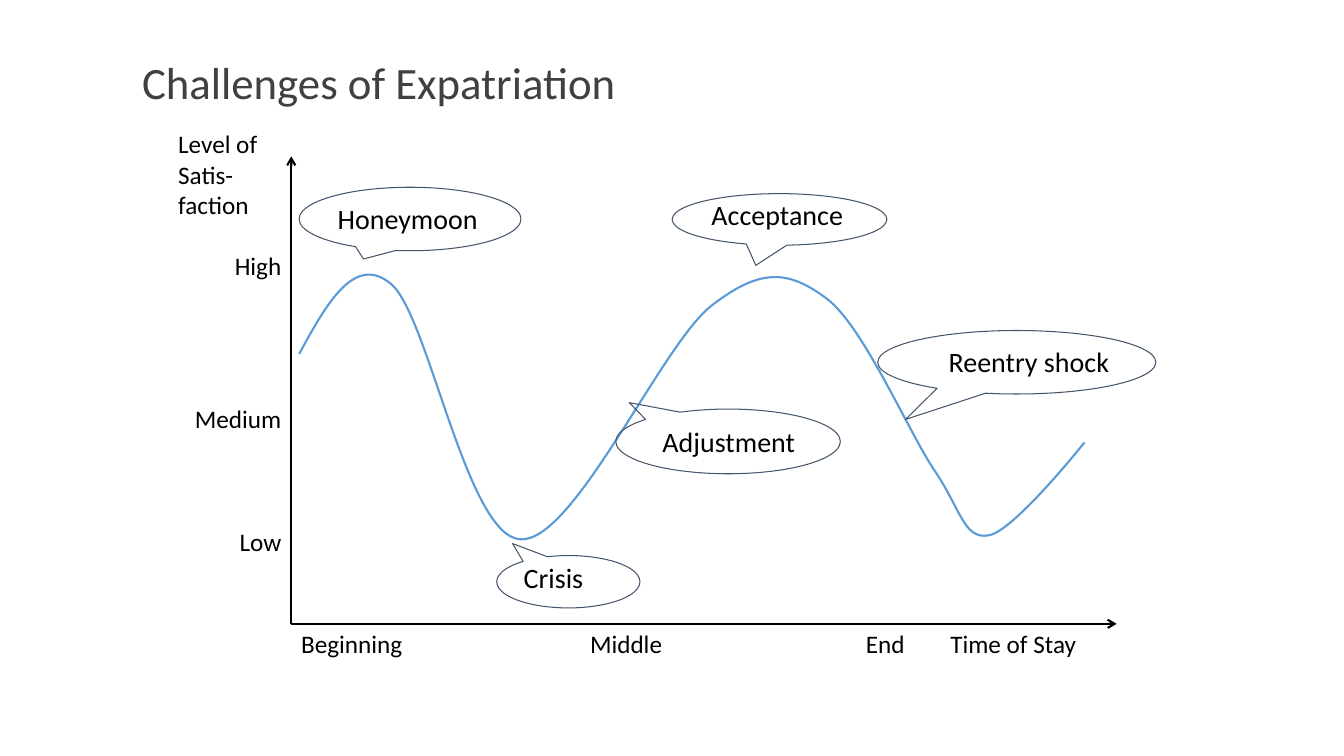
import pptx
import pptx.util
import pptx.dml.color
import pptx.enum.shapes
import pptx.enum.text
import pptx.oxml
import pptx.oxml.ns
from pptx.util import Cm, Pt

COLORS = {"title": "404041", "text": "000000", "axis": "000000",
          "curve": "5B9BD5", "callout": "44546A"}
FONT = "Calibri"
LINE_PITCH = 21.97  # points per line of 18 pt text

TITLE = "Challenges of Expatriation"
# Vertical axis: label, alignment, empty lines above it
LEVELS = [("Level of Satis-faction", "LEFT", 0), ("High", "RIGHT", 1),
          ("Medium", "RIGHT", 4), ("Low", "RIGHT", 3)]
# Horizontal axis: label, tab stop in cm
STAGES = [("Beginning", 0), ("Middle", 7.28), ("End", 14.23), ("Time of Stay", 16.36)]
# label, (left, top, width, height) in cm, pointer tip, alignment, left and right inset in cm
CALLOUTS = [
    ("Honeymoon", (7.54, 4.72, 5.59, 1.6), (-0.21, 0.63), "LEFT", 0.15, 0.15),
    ("Crisis", (12.52, 14, 3.61, 1.32), (-0.39, -0.73), "LEFT", 0.15, 0.15),
    ("Adjustment", (15.52, 10.31, 5.66, 1.63), (-0.44, -0.6), "RIGHT", 0, 0.31),
    ("Acceptance", (16.94, 4.88, 5.41, 1.3), (-0.11, 0.89), "RIGHT", 0, 0.31),
    ("Reentry shock", (22.12, 8.33, 7.01, 1.6), (-0.4, 0.9), "RIGHT", 0.15, 0.15),
]
ORIGIN = (7.34, 15.72)
AXIS_TIPS = [(7.34, 3.94), (28.14, 15.72)]
CURVE_START = (7.54, 8.92)
# Each row: two control points and the end point, in cm
CURVE = [
    [(8.23, 7.65), (8.94, 6.38), (9.86, 7.16)],
    [(10.8, 7.95), (11.76, 13.51), (13.11, 13.59)],
    [(14.45, 13.69), (16.64, 8.74), (17.91, 7.72)],
    [(19.2, 6.71), (19.89, 6.83), (20.83, 7.52)],
    [(21.74, 8.2), (22.86, 10.8), (23.52, 11.81)],
    [(24.21, 12.8), (24.28, 13.61), (24.92, 13.49)],
    [(25.55, 13.39), (27.33, 11.15), (27.33, 11.15)],
]


def cm(lengths):
    return [Cm(length) for length in lengths]


def rgb(role):
    return pptx.dml.color.RGBColor.from_string(COLORS[role])


def set_line(shape, role, width):
    shape.line.color.rgb = rgb(role)
    shape.line.width = Pt(width)


def add_run(paragraph, text, size, role="text"):
    run = paragraph.add_run()
    run.text = text
    run.font.name = FONT
    run.font.size = Pt(size)
    run.font.color.rgb = rgb(role)


def align(paragraph, side):
    paragraph.alignment = getattr(pptx.enum.text.PP_ALIGN, side)


def add_text_frame(slide, box):
    frame = slide.shapes.add_textbox(*cm(box)).text_frame
    frame.word_wrap = True
    return frame


def add_curve(slide):
    """Draw the control points as one outline, then join each three as a Bezier."""
    builder = slide.shapes.build_freeform(*cm(CURVE_START))
    builder.add_line_segments([cm(point) for row in CURVE for point in row], close=False)
    curve = builder.convert_to_shape()
    curve.shadow.inherit = False
    curve.fill.background()
    set_line(curve, "curve", 1.5)
    qn = pptx.oxml.ns.qn
    segments = list(curve.element.iter(qn("a:lnTo")))
    outline = segments[0].getparent()
    for first in range(0, len(segments), 3):
        bezier = outline.makeelement(qn("a:cubicBezTo"), {})
        outline.append(bezier)
        for segment in segments[first:first + 3]:
            bezier.append(segment[0])
            outline.remove(segment)


def add_axis(slide, tip):
    axis = slide.shapes.add_connector(
        pptx.enum.shapes.MSO_CONNECTOR.STRAIGHT, *cm(ORIGIN), *cm(tip))
    set_line(axis, "axis", 1.5)
    namespace = pptx.oxml.ns.nsdecls("a")
    axis.line._get_or_add_ln().append(
        pptx.oxml.parse_xml(f'<a:tailEnd {namespace} type="arrow"/>'))
    axis.element.spPr.append(pptx.oxml.parse_xml(f"<a:effectLst {namespace}/>"))


def add_callout(slide, label, box, tip, side, left, right):
    callout = slide.shapes.add_shape(
        pptx.enum.shapes.MSO_SHAPE.OVAL_CALLOUT, *cm(box))
    callout.adjustments[0], callout.adjustments[1] = tip
    callout.shadow.inherit = False
    callout.fill.background()
    set_line(callout, "callout", 0.75)
    frame = callout.text_frame
    frame.word_wrap = True
    frame.vertical_anchor = pptx.enum.text.MSO_ANCHOR.BOTTOM
    frame.margin_left, frame.margin_right = Cm(left), Cm(right)
    frame.margin_top = frame.margin_bottom = Cm(0.15)
    paragraph = frame.paragraphs[0]
    paragraph.line_spacing = 0.9
    align(paragraph, side)
    add_run(paragraph, label, 20)


def add_level_labels(slide):
    frame = add_text_frame(slide, (4.24, 3.12, 3.1, 11.02))
    for index, (label, side, gap) in enumerate(LEVELS):
        paragraph = frame.add_paragraph() if index else frame.paragraphs[0]
        if gap:
            paragraph.space_before = Pt(gap * LINE_PITCH)
        align(paragraph, side)
        add_run(paragraph, label, 18)


def add_stage_labels(slide):
    frame = add_text_frame(slide, (7.34, 15.72, 21.79, 1.02))
    paragraph = frame.paragraphs[0]
    stops = "".join(f'<a:tab pos="{Cm(stop)}" algn="l"/>' for _, stop in STAGES[1:])
    paragraph._p.get_or_add_pPr().append(pptx.oxml.parse_xml(
        f'<a:tabLst {pptx.oxml.ns.nsdecls("a")}>{stops}</a:tabLst>'))
    add_run(paragraph, "\t".join(label for label, _ in STAGES), 18)


def add_title(slide):
    frame = add_text_frame(slide, (3.33, 0.66, 23.7, 2.97))
    frame.vertical_anchor = pptx.enum.text.MSO_ANCHOR.MIDDLE
    frame.paragraphs[0].line_spacing = 0.9
    add_run(frame.paragraphs[0], TITLE, 32, "title")


def main():
    deck = pptx.Presentation()
    deck.slide_width, deck.slide_height = Cm(33.87), Cm(19.05)
    slide = deck.slides.add_slide(deck.slide_layouts[6])
    add_curve(slide)
    for tip in AXIS_TIPS:
        add_axis(slide, tip)
    for callout in CALLOUTS:
        add_callout(slide, *callout)
    add_level_labels(slide)
    add_stage_labels(slide)
    add_title(slide)
    deck.save("out.pptx")


if __name__ == "__main__":
    main()
